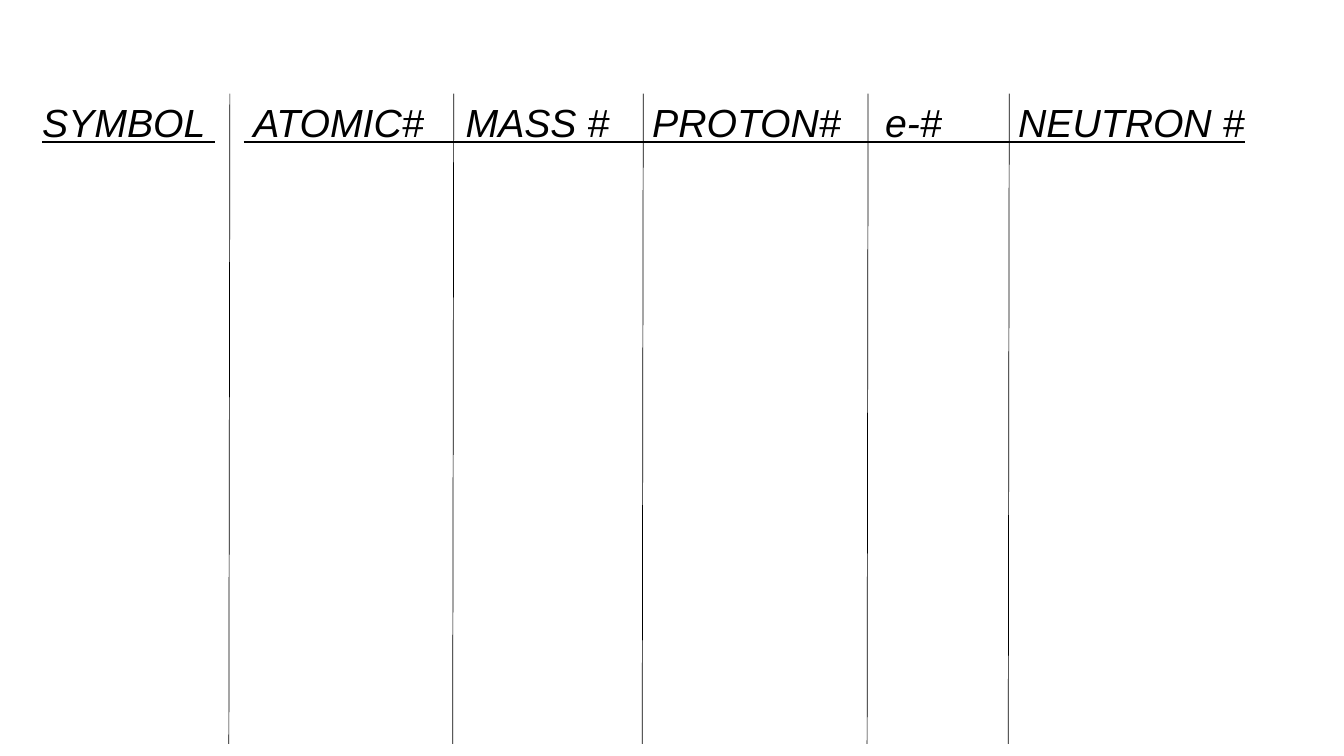
from dataclasses import dataclass

from lxml import etree
from pptx import Presentation
from pptx.dml.color import RGBColor
from pptx.enum.shapes import MSO_CONNECTOR
from pptx.enum.text import MSO_ANCHOR
from pptx.oxml.ns import qn
from pptx.util import Inches, Pt

STRAIGHT = MSO_CONNECTOR.STRAIGHT
TOP = MSO_ANCHOR.TOP


@dataclass(frozen=True)
class Theme:
    font: str = "Arial"
    ink: RGBColor = RGBColor(0, 0, 0)
    paper: RGBColor = RGBColor(255, 255, 255)
    heading_size: float = 28
    divider_width: float = 0.5
    rule_width: float = 1.5


def write(para, text, *, font, size, color, italic=False, underline=False):
    span = para.add_run()
    span.text = text
    span.font.name = font
    span.font.size = Pt(size)
    span.font.color.rgb = color
    span.font.italic = italic
    span.font.underline = underline


class Page:
    def __init__(self, deck, theme):
        self.theme = theme
        self.slide = deck.slides.add_slide(deck.slide_layouts[6])
        fill = self.slide.background.fill
        fill.solid()
        fill.fore_color.rgb = theme.paper

    def heading_row(self, headings, tab_stops, left, top, width, height):
        box = self.slide.shapes.add_textbox(
            Inches(left), Inches(top), Inches(width), Inches(height))
        frame = box.text_frame
        frame.word_wrap = True
        frame.vertical_anchor = TOP
        para = frame.paragraphs[0]
        tabs = etree.SubElement(para._p.get_or_add_pPr(), qn("a:tabLst"))
        for stop in tab_stops:
            etree.SubElement(tabs, qn("a:tab"), pos=str(Inches(stop)), algn="l")
        write(para, "\t".join(headings), font=self.theme.font,
              size=self.theme.heading_size, color=self.theme.ink,
              italic=True, underline=True)

    def line(self, start, end, width):
        line = self.slide.shapes.add_connector(
            STRAIGHT, *(Inches(value) for value in (*start, *end)))
        line.line.color.rgb = self.theme.ink
        line.line.width = Pt(width)
        etree.SubElement(line._element.spPr, qn("a:effectLst"))


def main():
    deck = Presentation()
    deck.slide_width, deck.slide_height = Inches(13.33), Inches(7.5)
    theme = Theme()
    page = Page(deck, theme)

    # Column headings, set on tab stops
    top, bottom = 0.93, 7.38
    headings = ["SYMBOL ", " ATOMIC#", "MASS #", "PROTON#", "e-#", "NEUTRON #"]
    page.heading_row(headings, [2, 4.2, 6.05, 8.36, 9.68], 0.32, top, 12.72, 1.51)

    # Rule that carries the underline across the tab gaps
    page.line((2.42, 1.41), (12.35, 1.41), theme.rule_width)

    # Column dividers, leaning slightly
    lean = 0.01
    for x in (2.28, 4.5, 6.38, 8.61, 10.01):
        page.line((x, top), (x - lean, bottom), theme.divider_width)

    deck.save("out.pptx")


if __name__ == "__main__":
    main()
